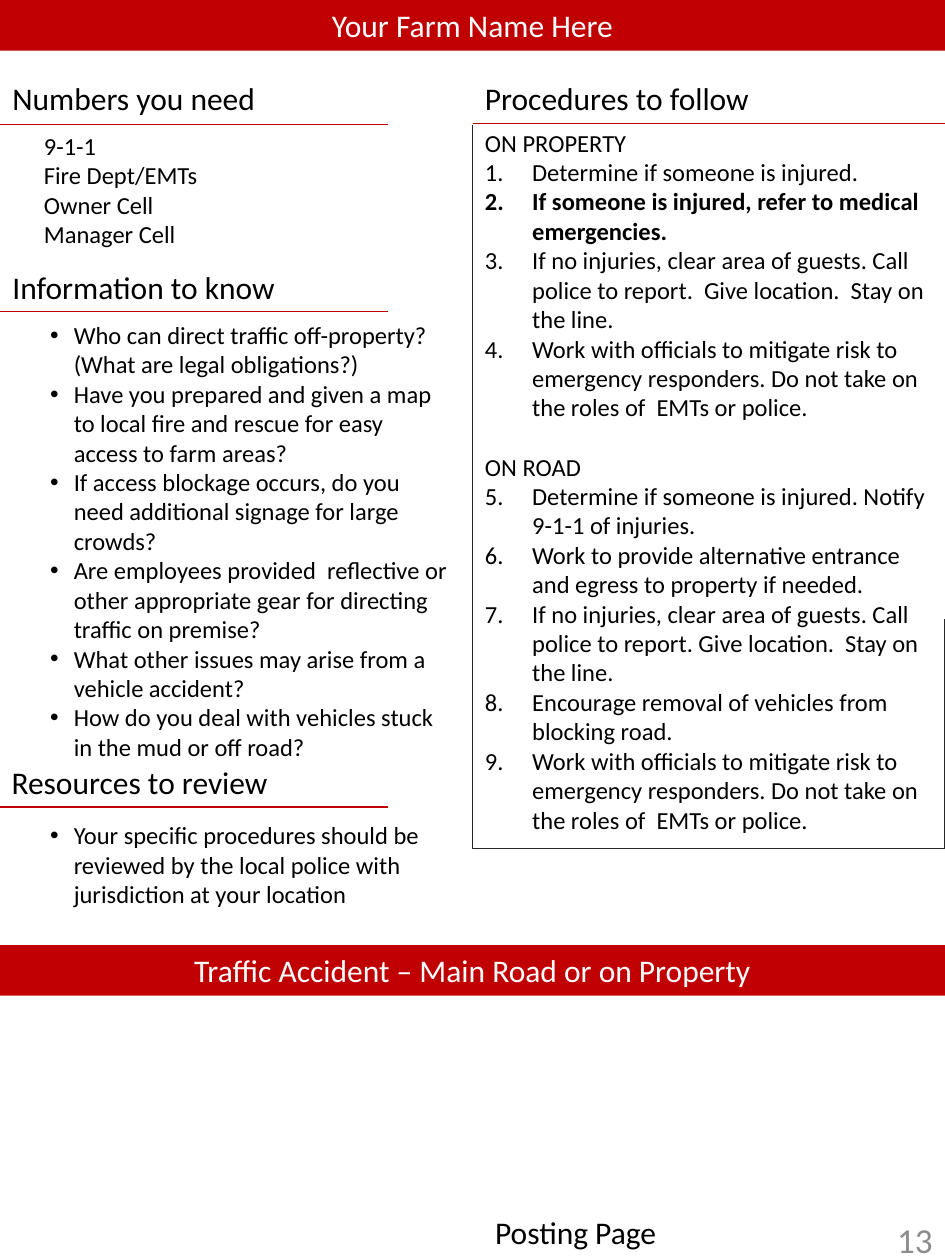
from lxml.etree import SubElement
from pptx import Presentation
from pptx.dml.color import RGBColor
from pptx.enum.shapes import MSO_CONNECTOR, MSO_SHAPE
from pptx.enum.text import MSO_ANCHOR, PP_ALIGN
from pptx.oxml.ns import qn
from pptx.util import Pt

RED, BLACK, WHITE, GREY, CHARCOAL = "C00000", "000000", "FFFFFF", "8C8C8C", "262626"
COLUMN = 270
PAGE_WIDTH = 540


def write(shape, lines, size, color=BLACK, align=PP_ALIGN.LEFT, indent=0, marker=None, **attributes):
    """Fill a shape with paragraphs, adding to any text it has; marker is a bullet tag."""
    frame = shape.text_frame
    frame.word_wrap = True
    for line in lines:
        paragraph = frame.paragraphs[-1]
        if paragraph.text:
            paragraph = frame.add_paragraph()
        paragraph.text = line
        paragraph.alignment = align
        if marker:
            properties = paragraph._p.get_or_add_pPr()
            properties.set("marL", str(Pt(indent)))
            properties.set("indent", str(Pt(-indent)))
            SubElement(properties, qn("a:buFont"), typeface="Arial" if marker == "a:buChar" else "+mj-lt")
            SubElement(properties, qn(marker), **attributes)
        font = paragraph.font
        font.name = "Calibri"
        font.size = Pt(size)
        font.color.rgb = RGBColor.from_string(color)
    return frame.paragraphs


def add_text(left, top, width, height, lines, size, **style):
    box = slide.shapes.add_textbox(Pt(left), Pt(top), Pt(width), Pt(height))
    write(box, lines, size, **style)
    return box


presentation = Presentation()
presentation.slide_width = Pt(PAGE_WIDTH)
presentation.slide_height = Pt(720)
slide = presentation.slides.add_slide(presentation.slide_layouts[6])

# Title bars
for top, title in [(0, "Your Farm Name Here"), (540, "Traffic Accident – Main Road or on Property")]:
    bar = slide.shapes.add_shape(MSO_SHAPE.RECTANGLE, 0, Pt(top), Pt(PAGE_WIDTH), Pt(29))
    bar.shadow.inherit = False
    bar.fill.solid()
    bar.fill.fore_color.rgb = RGBColor.from_string(RED)
    bar.line.fill.background()
    write(bar, [title], 18, color=WHITE, align=PP_ALIGN.CENTER)

# Section headings, each with a rule below
sections = [
    ("Numbers you need", 0, 41.8, 71.3, 222),
    ("Information to know", 0, 149.8, 178.2, 222),
    ("Resources to review", -0.5, 432.7, 461.2, 222),
    ("Procedures to follow", COLUMN, 41.8, 70.5, 270),
]
for heading, left, top, rule_top, rule_width in sections:
    add_text(left, top, 240, 29, [heading], 18)
    rule = slide.shapes.add_connector(
        MSO_CONNECTOR.STRAIGHT, Pt(left), Pt(rule_top), Pt(left + rule_width), Pt(rule_top))
    rule.line.color.rgb = RGBColor.from_string(RED)
    rule.line.width = Pt(0.75)
    SubElement(rule._element.spPr, qn("a:effectLst"))

# Left column
add_text(18, 71.3, 252, 92,
         ["9-1-1", "Fire Dept/EMTs", "Owner Cell", "Manager Cell"], 14)

bullets = {"indent": 13.5, "marker": "a:buChar", "char": "•"}
add_text(21.6, 179.3, 242.6, 250, [
    "Who can direct traffic off-property?  (What are legal obligations?)",
    "Have you prepared and given a map to local fire and rescue for easy access to farm areas?",
    "If access blockage occurs, do you need additional signage for large crowds?",
    "Are employees provided  reflective or other appropriate gear for directing traffic on premise?",
    "What other issues may arise from a vehicle accident?",
    "How do you deal with vehicles stuck in the mud or off road?",
], 14, **bullets)
add_text(21.6, 465.3, 242.6, 60, [
    "Your specific procedures should be reviewed by the local police with jurisdiction at your location",
], 14, **bullets)

# Right column: one numbered list in two parts
numbers = {"indent": 27, "marker": "a:buAutoNum", "type": "arabicPeriod"}
procedures = add_text(COLUMN, 69.4, 270, 448.6, ["ON PROPERTY"], 14)
paragraphs = write(procedures, [
    "Determine if someone is injured.",
    "If someone is injured, refer to medical emergencies.",
    "If no injuries, clear area of guests. Call police to report.  Give location.  Stay on the line.",
    "Work with officials to mitigate risk to emergency responders. "
    "Do not take on the roles of  EMTs or police.",
], 14, **numbers)
paragraphs[2].font.bold = True
paragraphs = write(procedures, ["ON ROAD"], 14)
paragraphs[-1].space_before = Pt(17)
write(procedures, [
    "Determine if someone is injured. Notify 9-1-1 of injuries.",
    "Work to provide alternative entrance and egress to property if needed.",
    "If no injuries, clear area of guests. Call police to report. Give location.  Stay on the line.",
    "Encourage removal of vehicles from blocking road.",
    "Work with officials to mitigate risk to emergency responders. "
    "Do not take on the roles of  EMTs or police.",
], 14, startAt="5", **numbers)

# Open border around the procedures
builder = slide.shapes.build_freeform(Pt(COLUMN), Pt(71.3))
builder.add_line_segments(
    [(Pt(COLUMN), Pt(485)), (Pt(PAGE_WIDTH), Pt(485)), (Pt(PAGE_WIDTH), Pt(354))], close=False)
border = builder.convert_to_shape()
border.shadow.inherit = False
border.fill.background()
border.line.color.rgb = RGBColor.from_string(CHARCOAL)
border.line.width = Pt(0.75)

# Footer
add_text(275.8, 689.8, 264, 29, ["Posting Page"], 18)
page_number = add_text(414, 696, 126, 24, ["13"], 20, color=GREY, align=PP_ALIGN.RIGHT)
page_number.text_frame.vertical_anchor = MSO_ANCHOR.MIDDLE

presentation.save("out.pptx")
